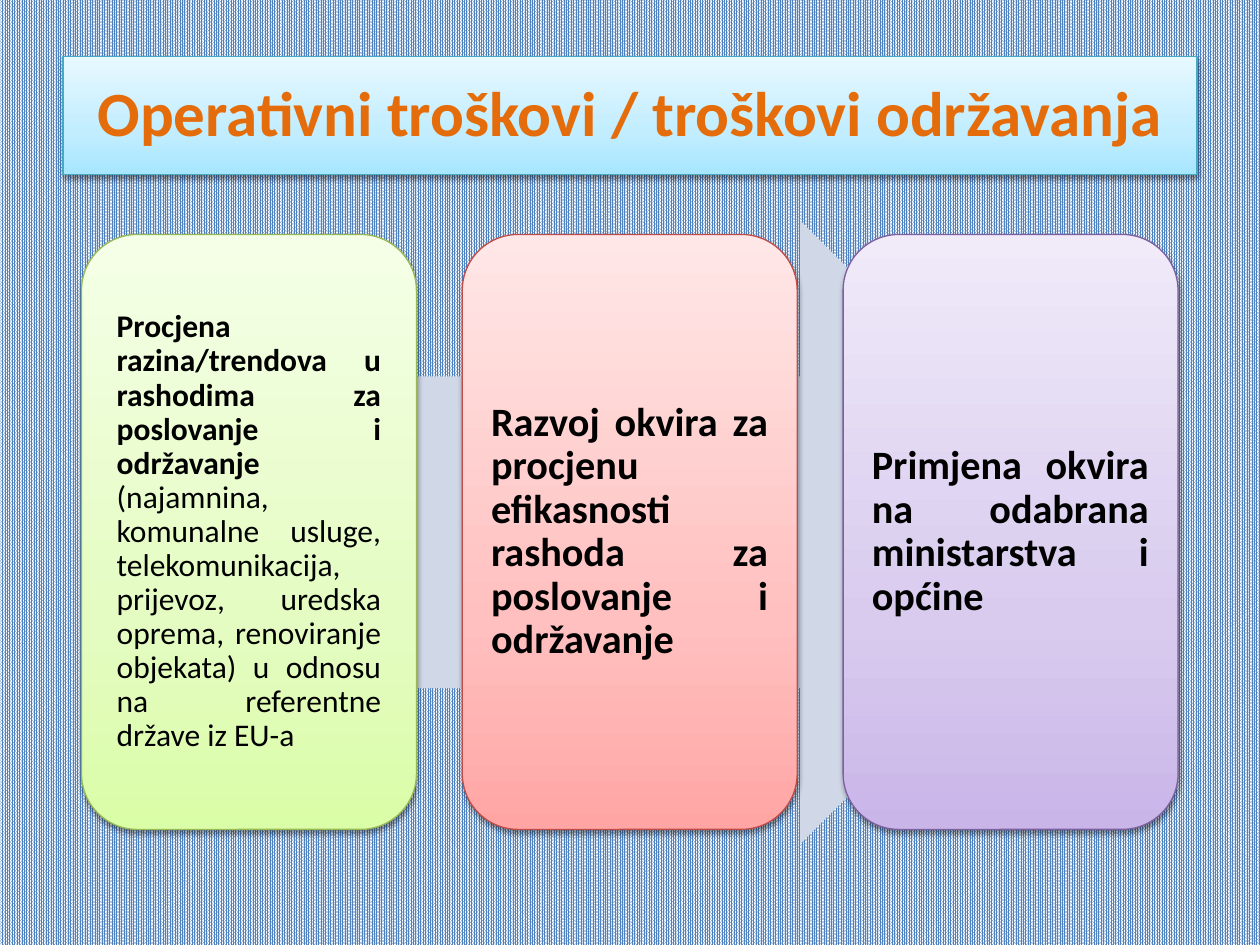
from copy import deepcopy

from lxml import etree
from pptx import Presentation
from pptx.dml.color import RGBColor
from pptx.enum import dml, shapes, text
from pptx.oxml.ns import qn
from pptx.util import Pt

COLORS = {
    "pattern": "4F81BD", "paper": "FFFFFF", "arrow": "D0D8E8",
    "title": "E46C0A", "body": "000000", "shadow": "000000",
}
# Gradient stops from bottom to top, then the outline
PALETTES = {
    "blue": ("A7E6FF", "C1EDFF", "E7F8FF", "46AAC5"),
    "green": ("DAFDA7", "E4FCC2", "F5FFE7", "98B955"),
    "red": ("FFA6A5", "FFC0BF", "FFE7E7", "BF4C48"),
    "purple": ("C9B5E8", "D8CBEE", "F0EAF9", "7D60A0"),
}
STOPS = (0, 0.35, 1)

TITLE = [("Operativni troškovi / troškovi održavanja", True)]
# Palette, text size, inset, spans as (wording, bold)
CARDS = [
    ("green", 18, 10.8, [
        ("Procjena razina/trendova u rashodima za poslovanje i održavanje", True),
        (" (najamnina, komunalne usluge, telekomunikacija, prijevoz, uredska oprema, "
         "renoviranje objekata) u odnosu na referentne države iz EU-a", False),
    ]),
    ("red", 23, 7.2, [
        ("Razvoj okvira za procjenu efikasnosti rashoda za poslovanje i održavanje", True),
    ]),
    ("purple", 23, 7.2, [
        ("Primjena okvira na odabrana ministarstva i općine", True),
    ]),
]

TITLE_BOX = (36, 32.4, 648, 67.5)
ARROW_BOX = (84.4, 126, 551, 356.4)
CARD_LEFT, CARD_TOP, CARD_WIDTH, CARD_HEIGHT, CARD_GAP = 46.6, 134, 191.4, 340, 26.2


def color(name):
    return RGBColor.from_string(COLORS.get(name, name))


def style_panel(panel, palette):
    """Give a panel its three-stop gradient, outline and soft shadow."""
    *tints, outline = PALETTES[palette]
    panel.fill.gradient()
    panel.fill.gradient_angle = 90
    stop_list = panel._element.spPr.find(".//" + qn("a:gsLst"))
    stop_list.insert(1, deepcopy(stop_list[0]))
    for stop, position, tint in zip(panel.fill.gradient_stops, STOPS, tints):
        stop.position = position
        stop.color.rgb = color(tint)
    panel.line.color.rgb = color(outline)
    panel.line.width = Pt(0.75)

    panel.shadow.inherit = False
    effects = panel._element.spPr.find(qn("a:effectLst"))
    shadow = etree.SubElement(effects, qn("a:outerShdw"), blurRad=str(Pt(3.1)),
                              dist=str(Pt(1.6)), dir="5400000", rotWithShape="0")
    tone = etree.SubElement(shadow, qn("a:srgbClr"), val=COLORS["shadow"])
    etree.SubElement(tone, qn("a:alpha"), val="38000")


def write_text(panel, spans, size, inset, ink, alignment):
    frame = panel.text_frame
    settings = {
        "word_wrap": True, "auto_size": text.MSO_AUTO_SIZE.NONE,
        "vertical_anchor": text.MSO_ANCHOR.MIDDLE,
        "margin_left": Pt(inset), "margin_right": Pt(inset),
        "margin_top": Pt(inset), "margin_bottom": Pt(inset),
    }
    for name, value in settings.items():
        setattr(frame, name, value)
    para = frame.paragraphs[0]
    para.alignment = alignment
    para.line_spacing = 0.9
    for wording, bold in spans:
        span = para.add_run()
        span.text = wording
        for name, value in {"name": "Calibri", "size": Pt(size), "bold": bold}.items():
            setattr(span.font, name, value)
        span.font.color.rgb = color(ink)


def add_title(page):
    title = page.shapes.title
    for name, value in zip(("left", "top", "width", "height"), TITLE_BOX):
        setattr(title, name, Pt(value))
    outline = etree.SubElement(title._element.spPr, qn("a:prstGeom"), prst="roundRect")
    etree.SubElement(outline, qn("a:avLst"))
    style_panel(title, "blue")
    write_text(title, TITLE, 36, 10.8, "title", text.PP_ALIGN.CENTER)


def add_arrow(page):
    arrow = page.shapes.add_shape(shapes.MSO_SHAPE.RIGHT_ARROW, *map(Pt, ARROW_BOX))
    arrow.fill.solid()
    arrow.fill.fore_color.rgb = color("arrow")
    arrow.line.fill.background()
    arrow.shadow.inherit = False


def add_cards(page):
    for index, (palette, size, inset, spans) in enumerate(CARDS):
        left = CARD_LEFT + index * (CARD_WIDTH + CARD_GAP)
        card = page.shapes.add_shape(shapes.MSO_SHAPE.ROUNDED_RECTANGLE, Pt(left),
                                     Pt(CARD_TOP), Pt(CARD_WIDTH), Pt(CARD_HEIGHT))
        style_panel(card, palette)
        write_text(card, spans, size, inset, "body", text.PP_ALIGN.JUSTIFY)


def main():
    deck = Presentation()
    deck.slide_width, deck.slide_height = Pt(720), Pt(540)
    page = deck.slides.add_slide(deck.slide_layouts[5])
    backdrop = page.background.fill
    backdrop.patterned()
    backdrop.pattern = dml.MSO_PATTERN.PERCENT_90
    backdrop.fore_color.rgb = color("pattern")
    backdrop.back_color.rgb = color("paper")
    add_title(page)
    add_arrow(page)
    add_cards(page)
    deck.save("out.pptx")


if __name__ == "__main__":
    main()
